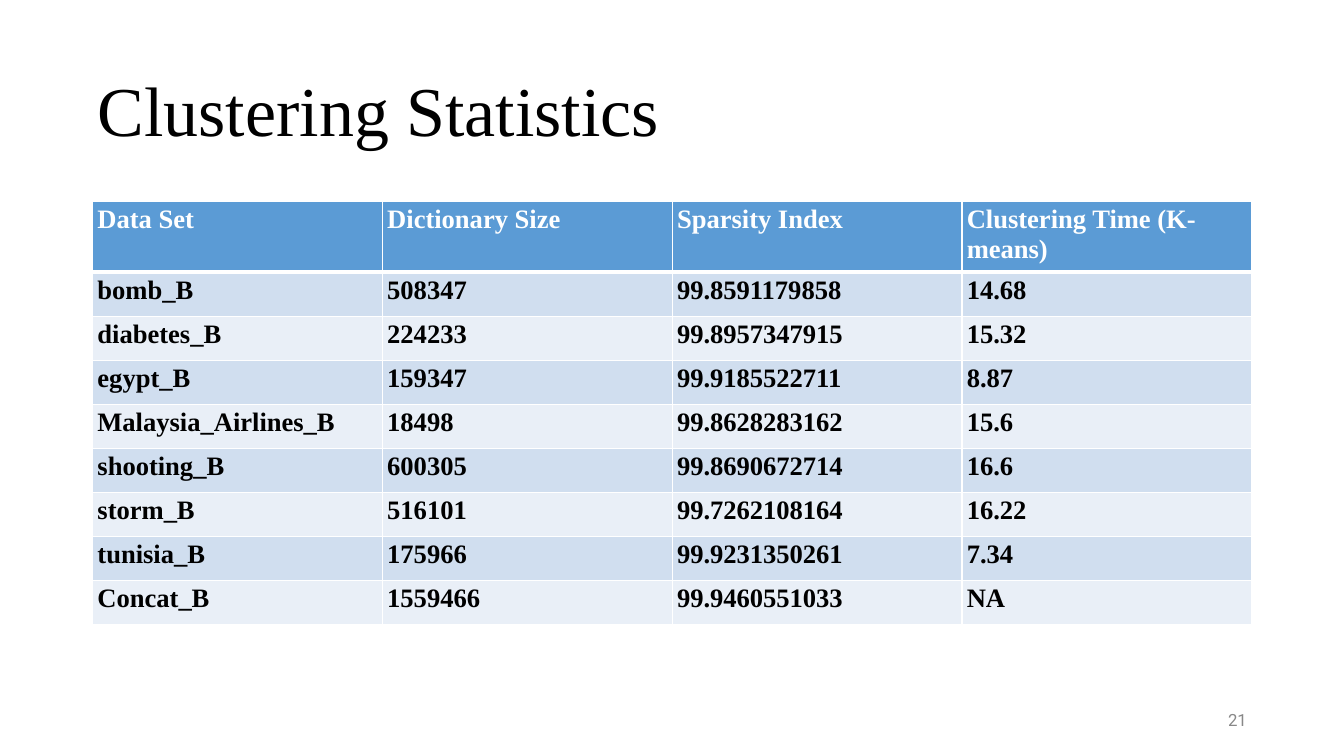
"""Build the Clustering Statistics slide with its table of data sets."""
from lxml.etree import SubElement
from pptx import Presentation
from pptx.dml.color import RGBColor
from pptx.enum.text import MSO_ANCHOR as Anchor, PP_ALIGN as Align
from pptx.oxml.ns import qn
from pptx.util import Pt

COLORS = {"title": "000000", "body": "000000", "head": "FFFFFF", "number": "888888",
          "head_fill": "5B9BD5", "odd_fill": "D0DEEF", "even_fill": "E9EFF7", "border": "FFFFFF"}
SERIF = "Times New Roman"
ROWS = [
    ("Data Set", "Dictionary Size", "Sparsity Index", "Clustering Time (K- means)"),
    ("bomb_B", "508347", "99.8591179858", "14.68"),
    ("diabetes_B", "224233", "99.8957347915", "15.32"),
    ("egypt_B", "159347", "99.9185522711", "8.87"),
    ("Malaysia_Airlines_B", "18498", "99.8628283162", "15.6"),
    ("shooting_B", "600305", "99.8690672714", "16.6"),
    ("storm_B", "516101", "99.7262108164", "16.22"),
    ("tunisia_B", "175966", "99.9231350261", "7.34"),
    ("Concat_B", "1559466", "99.9460551033", "NA"),
]
LEFT, TOP, WIDTH = 66.24, 144, 828
HEAD_HEIGHT, ROW_HEIGHT = 48.5, 31.5


def write(paragraph, text, color, **font_format):
    paragraph.text = text
    font = paragraph.runs[0].font
    font.color.rgb = RGBColor.from_string(COLORS[color])
    for name, value in font_format.items():
        setattr(font, name, value)


def add_border(cell, side, width):
    line = SubElement(cell._tc.get_or_add_tcPr(), qn(f"a:ln{side}"), w=str(Pt(width)))
    fill = SubElement(line, qn("a:solidFill"))
    SubElement(fill, qn("a:srgbClr"), val=COLORS["border"])


presentation = Presentation()
presentation.slide_width, presentation.slide_height = Pt(960), Pt(540)
slide = presentation.slides.add_slide(presentation.slide_layouts[6])

texts = [
    ("Clustering Statistics", (LEFT, 28.8, WIDTH, 104.4), "title", Align.LEFT, 0.9,
     {"size": Pt(50), "name": SERIF}),
    ("21", (678.24, 504, 216, 20.88), "number", Align.RIGHT, 1.0,
     {"size": Pt(12), "name": "Roboto"}),
]
for text, place, color, alignment, spacing, font_format in texts:
    frame = slide.shapes.add_textbox(*map(Pt, place)).text_frame
    frame_format = {"word_wrap": True, "vertical_anchor": Anchor.MIDDLE,
                    "margin_left": Pt(3.6), "margin_right": Pt(3.6),
                    "margin_top": Pt(3.6), "margin_bottom": Pt(3.6)}
    for name, value in frame_format.items():
        setattr(frame, name, value)
    paragraph = frame.paragraphs[0]
    paragraph.alignment, paragraph.line_spacing = alignment, spacing
    write(paragraph, text, color, **font_format)

height = HEAD_HEIGHT + ROW_HEIGHT * (len(ROWS) - 1)
table = slide.shapes.add_table(len(ROWS), len(ROWS[0]), Pt(LEFT), Pt(TOP),
                               Pt(WIDTH), Pt(height)).table
cell_format = {"margin_left": Pt(3.4), "margin_right": Pt(3.4),
               "margin_top": Pt(2.4), "margin_bottom": Pt(2.4)}
for row_index, values in enumerate(ROWS):
    is_head = row_index == 0
    table.rows[row_index].height = Pt(HEAD_HEIGHT if is_head else ROW_HEIGHT)
    fill = "head_fill" if is_head else "odd_fill" if row_index % 2 else "even_fill"
    for column_index, value in enumerate(values):
        cell = table.cell(row_index, column_index)
        for name, margin in cell_format.items():
            setattr(cell, name, margin)
        for side in "LRTB":
            thick = (is_head and side == "B") or (row_index == 1 and side == "T")
            add_border(cell, side, 3 if thick else 1)
        cell.fill.solid()
        cell.fill.fore_color.rgb = RGBColor.from_string(COLORS[fill])
        write(cell.text_frame.paragraphs[0], value, "head" if is_head else "body",
              size=Pt(19), name=SERIF, bold=True)

presentation.save("out.pptx")
